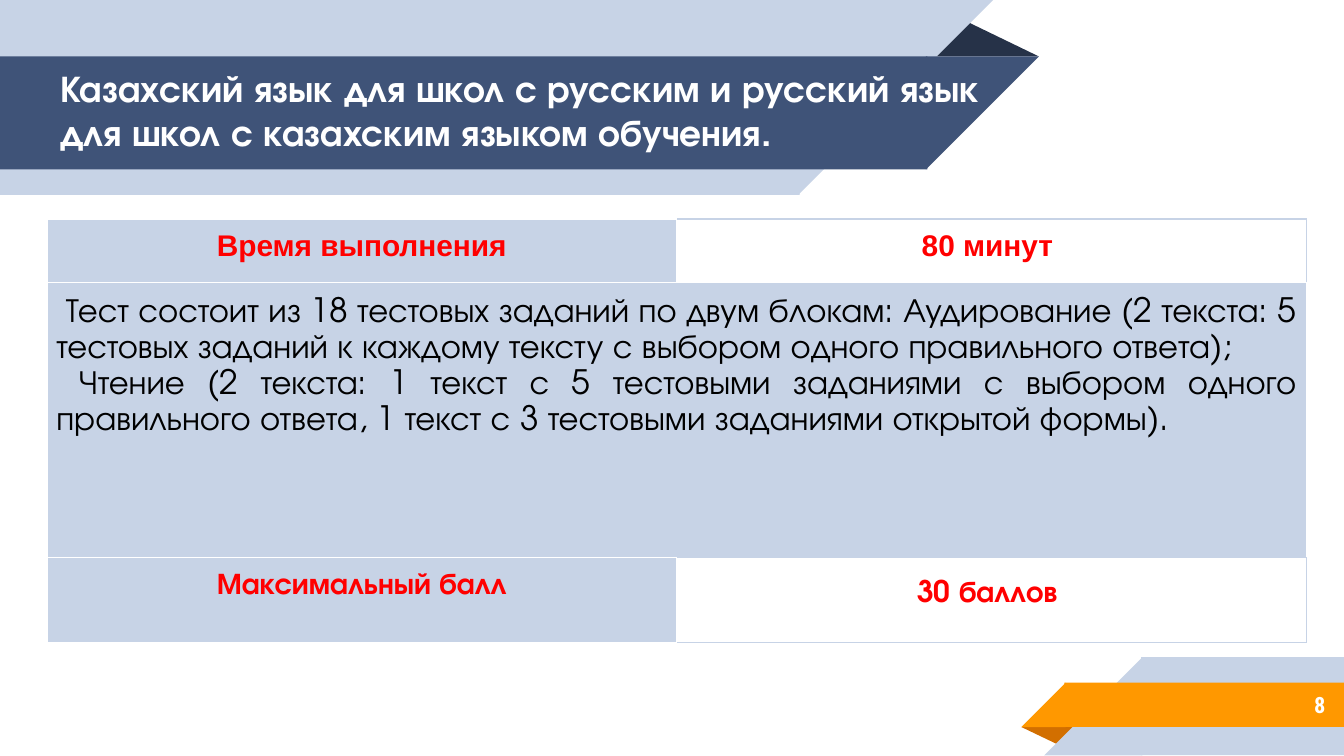
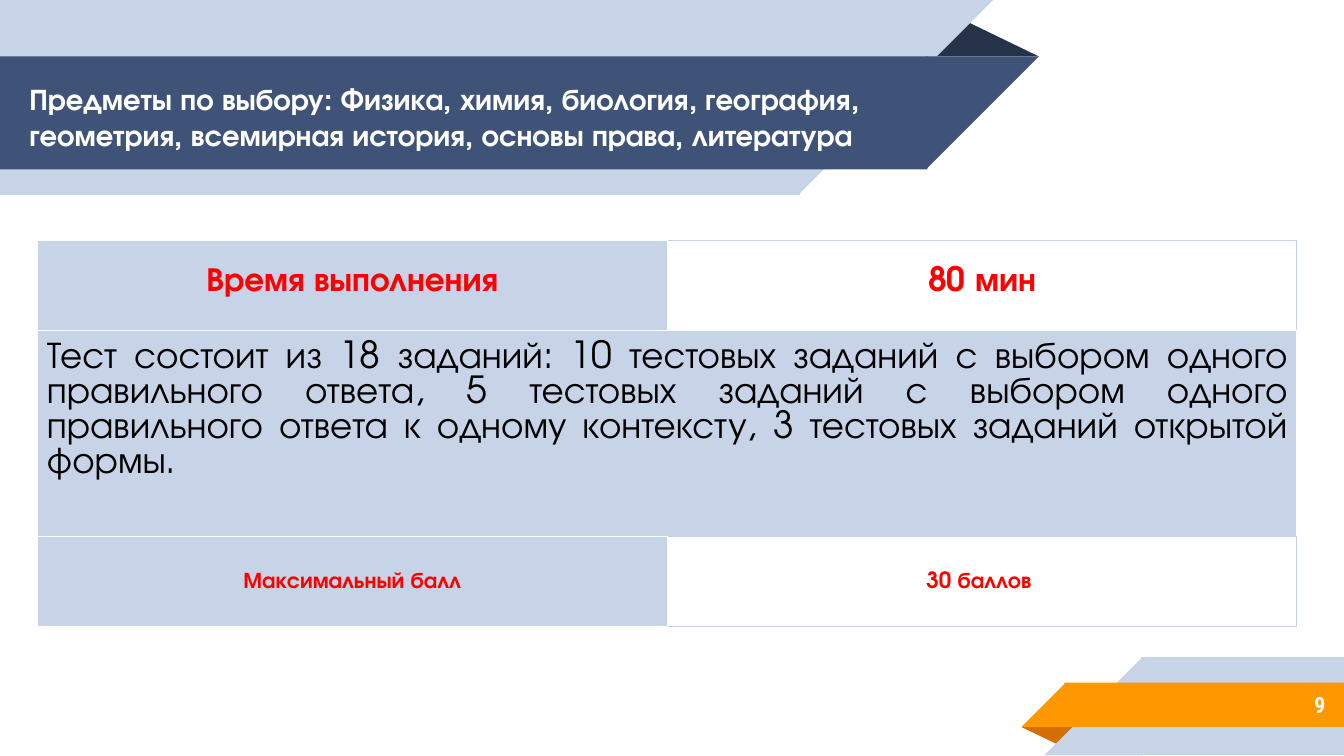
from lxml import etree
from pptx import Presentation
from pptx import util as u
from pptx.dml.color import RGBColor
from pptx.enum import shapes, text
from pptx.oxml import ns

PALE = RGBColor(0xC7, 0xD3, 0xE6)
NAVY = RGBColor(0x3F, 0x53, 0x78)
INK = RGBColor(0x26, 0x32, 0x48)
ORANGE = RGBColor(0xFF, 0x98, 0x00)
RUST = RGBColor(0xD2, 0x6F, 0x00)
WHITE = RGBColor(0xFF, 0xFF, 0xFF)
RED = RGBColor(0xFF, 0x00, 0x00)
BLACK = RGBColor(0x00, 0x00, 0x00)

GEOMETRIC = "TeX Gyre Adventor"
RECT = shapes.MSO_SHAPE.RECTANGLE
CORNER = shapes.MSO_SHAPE.RIGHT_TRIANGLE
FOLD = shapes.MSO_SHAPE.ISOSCELES_TRIANGLE
LEFT, CENTER = text.PP_ALIGN.LEFT, text.PP_ALIGN.CENTER
RIGHT, JUSTIFY = text.PP_ALIGN.RIGHT, text.PP_ALIGN.JUSTIFY
TOP, MIDDLE = text.MSO_ANCHOR.TOP, text.MSO_ANCHOR.MIDDLE

# Ribbon parts from back to front: shape, left, top, width, height, rotation, colour.
# Each rectangle runs 0.01 under its corner so that no seam shows.
RIBBONS = [
    (FOLD, 6.88, 0.14, 0.85, 0.28, 0, INK),
    (RECT, 0, 0, 5.95, 1.45, 0, PALE),
    (CORNER, 5.94, 0, 1.45, 1.45, 90, PALE),
    (RECT, 0, 0.42, 6.9, 0.84, 0, NAVY),
    (CORNER, 6.89, 0.42, 0.84, 0.84, 90, NAVY),
    (FOLD, 7.6, 5.41, 0.43, 0.14, 180, RUST),
    (RECT, 8.49, 4.89, 1.51, 0.73, 0, PALE),
    (CORNER, 7.77, 4.89, 0.73, 0.73, 270, PALE),
    (RECT, 7.92, 5.08, 2.08, 0.33, 0, ORANGE),
    (CORNER, 7.6, 5.08, 0.33, 0.33, 270, ORANGE),
]

SLIDES = [
    dict(
        number="8",
        title="Казахский язык для школ с русским и русский язык для школ с казахским языком обучения.",
        title_box=(0.35, 0.61, 7.17, 0.41), title_size=20,
        table_at=(0.35, 1.63), rows=(0.47, 2.05, 0.63),
        time="80 минут ", time_format=dict(size=16, font="Arial"),
        body=[" Тест состоит из 18 тестовых заданий по двум блокам: Аудирование (2 текста: 5 тестовых "
              "заданий к каждому тексту с выбором одного правильного ответа);",
              " Чтение (2 текста: 1 текст с 5 тестовыми заданиями с выбором одного правильного ответа, "
              "1 текст с 3 тестовыми заданиями открытой формы). "],
        body_format=dict(size=18, spacing=1.15),
        score_format=dict(size=16, anchor=TOP), score_top=0.14,
    ),
    dict(
        number="9",
        title="Предметы по выбору: Физика, химия, биология, география, геометрия, всемирная история, "
              "основы права, литература",
        title_box=(0.12, 0.45, 7.24, 0.84), title_size=16,
        table_at=(0.28, 1.79), rows=(0.67, 1.53, 0.67),
        time="80 мин", time_format=dict(size=18),
        body=["Тест состоит из 18 заданий: 10 тестовых заданий с выбором одного правильного ответа, "
              "5 тестовых заданий с выбором одного правильного ответа к одному контексту, "
              "3 тестовых заданий открытой формы."],
        body_format=dict(size=20),
        score_format=dict(size=12, anchor=MIDDLE), score_top=0,
    ),
]


def write(tf, *paragraphs, size, color, font=GEOMETRIC, bold=True, align=LEFT, spacing=None):
    tf.word_wrap = True
    for i, line in enumerate(paragraphs):
        p = tf.add_paragraph() if i else tf.paragraphs[0]
        p.alignment = align
        p.line_spacing = spacing
        r = p.add_run()
        r.text = line
        r.font.size, r.font.name, r.font.bold = u.Pt(size), font, bold
        r.font.color.rgb = color


def style_cell(cell, filled):
    """Pale cells get white borders; open cells get pale borders except on the left."""
    tc_pr = cell._tc.get_or_add_tcPr()
    for side in ("lnL", "lnR", "lnT", "lnB"):
        ln = etree.SubElement(tc_pr, ns.qn(f"a:{side}"), w=str(u.Pt(0.75)))
        fill = etree.SubElement(ln, ns.qn("a:solidFill"))
        color = WHITE if filled or side == "lnL" else PALE
        etree.SubElement(fill, ns.qn("a:srgbClr"), val=str(color))
    if filled:
        cell.fill.solid()
        cell.fill.fore_color.rgb = PALE
    else:
        cell.fill.background()
    cell.margin_left = cell.margin_right = u.Inches(0.07)
    cell.margin_top = cell.margin_bottom = u.Inches(0.08)


prs = Presentation()
prs.slide_width = u.Inches(10)
prs.slide_height = prs.slide_width * 9 // 16

for page in SLIDES:
    s = prs.slides.add_slide(prs.slide_layouts[6])

    for kind, left, top, width, height, rotation, color in RIBBONS:
        sp = s.shapes.add_shape(kind, *map(u.Inches, (left, top, width, height)))
        sp.rotation = rotation
        sp.shadow.inherit = False
        sp.fill.solid()
        sp.fill.fore_color.rgb = color
        sp.line.fill.background()
        if kind == FOLD:
            sp.adjustments[0] = 0.32

    for box, words, size, font, align in (
        (page["title_box"], page["title"], page["title_size"], GEOMETRIC, LEFT),
        ((8.33, 5.07, 1.63, 0.35), page["number"], 12, "Roboto Condensed", RIGHT),
    ):
        tf = s.shapes.add_textbox(*map(u.Inches, box)).text_frame
        tf.margin_left = tf.margin_right = tf.margin_top = tf.margin_bottom = u.Inches(0.1)
        tf.vertical_anchor = MIDDLE
        write(tf, words, size=size, color=WHITE, font=font, align=align)

    left, top = page["table_at"]
    table = s.shapes.add_table(3, 2, u.Inches(left), u.Inches(top),
                               u.Inches(9.37), u.Inches(sum(page["rows"]))).table
    table.first_row = table.horz_banding = False
    for row, height in zip(table.rows, page["rows"]):
        row.height = u.Inches(height)
    for i in range(3):
        for j in range(2):
            style_cell(table.cell(i, j), filled=j == 0 or i == 1)

    for j, words in enumerate(("Время выполнения", page["time"])):
        cell = table.cell(0, j)
        cell.vertical_anchor = MIDDLE
        write(cell.text_frame, words, color=RED, align=CENTER, spacing=u.Pt(13), **page["time_format"])

    body = table.cell(1, 0)
    body.merge(table.cell(1, 1))
    write(body.text_frame, *page["body"], color=BLACK, bold=False, align=JUSTIFY, **page["body_format"])

    for j, words in enumerate(("Максимальный балл", "30 баллов ")):
        cell = table.cell(2, j)
        cell.vertical_anchor = page["score_format"]["anchor"]
        write(cell.text_frame, words, size=page["score_format"]["size"], color=RED,
              align=CENTER, spacing=1.15)
    cell.margin_top, cell.margin_bottom = u.Inches(page["score_top"]), 0

prs.save("out.pptx")
